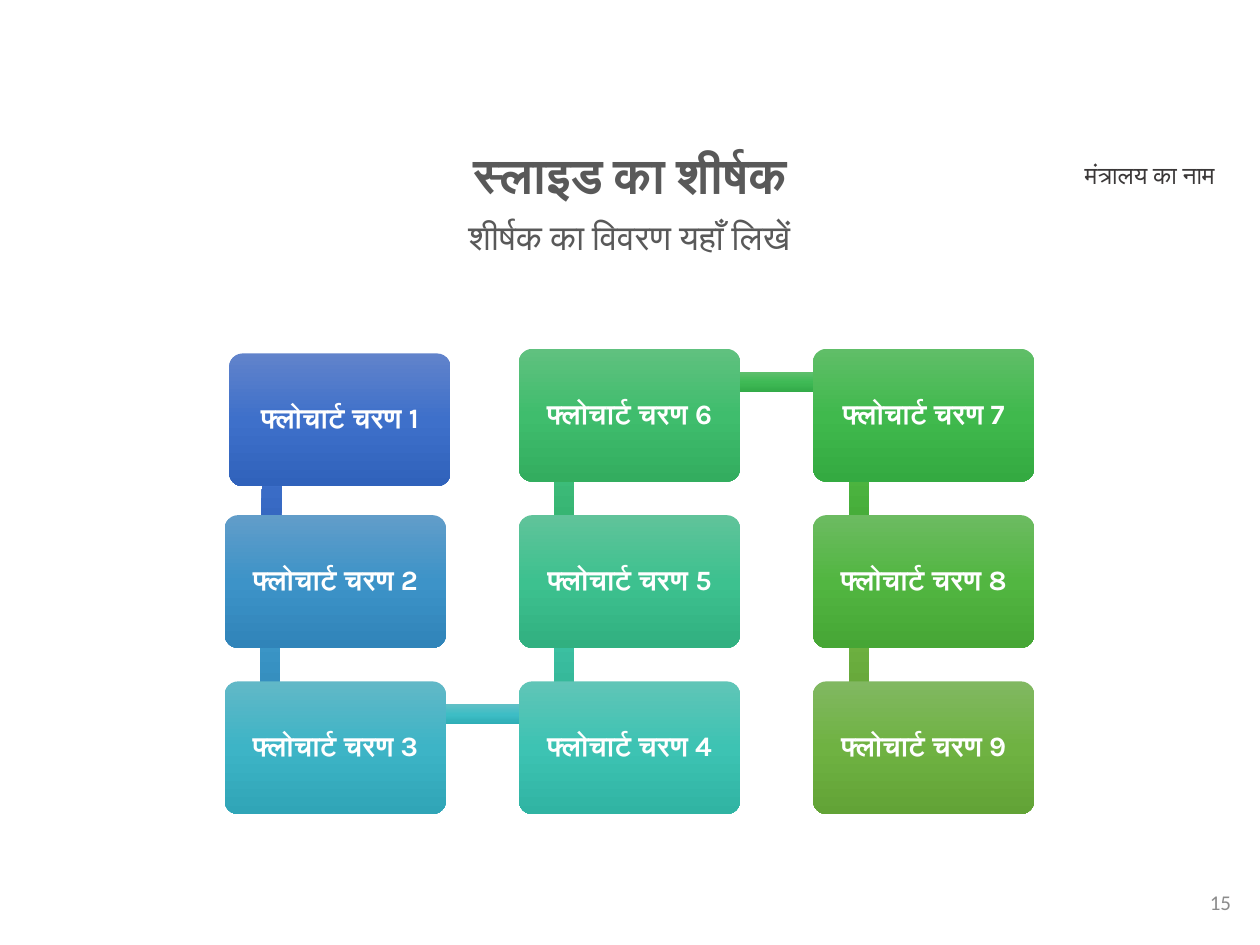
import math

import pptx
import pptx.dml.color
import pptx.enum.shapes
import pptx.enum.text
import pptx.oxml
import pptx.oxml.ns
import pptx.util

Pt = pptx.util.Pt
SHAPE = pptx.enum.shapes.MSO_SHAPE
ALIGN = pptx.enum.text.PP_ALIGN
ANCHOR = pptx.enum.text.MSO_ANCHOR

# Content
TITLE = "स्लाइड का शीर्षक"
SUBTITLE = "शीर्षक का विवरण यहाँ लिखें"
MINISTRY = "मंत्रालय का नाम"
PAGE = "15"

# Each step: text, box gradient, gradient of the link to the next step
STEPS = [
    ("फ्लोचार्ट चरण 1", ("6183CB", "3E70CA", "3062BB"), ("6183CB", "3E70CA", "3062BB")),
    ("फ्लोचार्ट चरण 2", ("619DC9", "3D93C8", "3084B9"), ("61A1C9", "3D97C8", "3089B9")),
    ("फ्लोचार्ट चरण 3", ("61B8C7", "3DB4C6", "30A5B7"), ("61C0C6", "3DBDC5", "2FAEB6")),
    ("फ्लोचार्ट चरण 4", ("60C5B7", "3DC3B3", "30B4A3"), ("60C4AA", "3DC2A3", "31B294")),
    ("फ्लोचार्ट चरण 5", ("60C39A", "3DC18F", "31B080"), ("60C28A", "3EBE7B", "32AE6D")),
    ("फ्लोचार्ट चरण 6", ("60C17F", "3FBD6D", "33AD5F"), ("60BF6E", "3FBA56", "33AB49")),
    ("फ्लोचार्ट चरण 7", ("60BE68", "40B94D", "34AA41"), ("69BB61", "4EB641", "41A735")),
    ("फ्लोचार्ट चरण 8", ("6CBB61", "52B641", "46A635"), ("81B861", "6FB242", "62A336")),
    ("फ्लोचार्ट चरण 9", ("81B861", "6FB242", "62A336"), None),
]

# Grid
ROWS = 3
LEFT, TOP = 128.4, 199.4
STEP_X, STEP_Y = 168.1, 95
BOX_W, BOX_H = 126.4, 75.8
FIRST_SHIFT = (2.6, 2.6)
JOINT_X, JOINT_Y = 26, 18.8
LINK_H = 11.4


def color(value):
    return pptx.dml.color.RGBColor.from_string(value)


def place(sp, left, top, width, height):
    sp.left, sp.top, sp.width, sp.height = Pt(left), Pt(top), Pt(width), Pt(height)


def write(sp, text, size, font, ink, bold=False, align=ALIGN.CENTER,
          anchor=ANCHOR.TOP, spacing=1.0):
    tf = sp.text_frame
    tf.word_wrap = True
    tf.auto_size = pptx.enum.text.MSO_AUTO_SIZE.NONE
    tf.vertical_anchor = anchor
    p = tf.paragraphs[0]
    p.alignment = align
    p.line_spacing = spacing
    p.space_before = Pt(0)
    r = p.add_run()
    r.text = text
    r.font.size, r.font.name, r.font.bold = Pt(size), font, bold
    r.font.color.rgb = color(ink)
    # Devanagari uses the complex-script font
    cs = pptx.oxml.parse_xml(f'<a:cs {pptx.oxml.ns.nsdecls("a")} typeface="{font}"/>')
    r.font._element.append(cs)


def add_gradient_shape(s, kind, left, top, width, height, colors):
    sp = s.shapes.add_shape(kind, Pt(left), Pt(top), Pt(width), Pt(height))
    sp.shadow.inherit = False
    sp.line.fill.background()
    stops = "".join(f'<a:gs pos="{i * 50000}"><a:srgbClr val="{c}"/></a:gs>'
                    for i, c in enumerate(colors))
    fill = pptx.oxml.parse_xml(
        f'<a:gradFill {pptx.oxml.ns.nsdecls("a")} rotWithShape="0">'
        f'<a:gsLst>{stops}</a:gsLst><a:lin ang="5400000" scaled="0"/></a:gradFill>')
    sp._element.spPr.find(pptx.oxml.ns.qn("a:prstGeom")).addnext(fill)
    return sp


def box_corner(i):
    """Boxes run down the first column, up the second and down the third."""
    col, row = divmod(i, ROWS)
    if col % 2:
        row = ROWS - 1 - row
    dx, dy = FIRST_SHIFT if i == 0 else (0, 0)
    return LEFT + col * STEP_X + dx, TOP + row * STEP_Y + dy


def add_link(s, start, end, colors):
    """A bar between the same inner point of two boxes."""
    dx, dy = end[0] - start[0], end[1] - start[1]
    length = math.hypot(dx, dy)
    left = (start[0] + end[0] - length) / 2 + JOINT_X
    top = (start[1] + end[1] - LINK_H) / 2 + JOINT_Y
    sp = add_gradient_shape(s, SHAPE.RECTANGLE, left, top, length, LINK_H, colors)
    sp.rotation = math.degrees(math.atan2(dy, dx)) % 360


def main():
    prs = pptx.Presentation()
    prs.slide_width, prs.slide_height = Pt(720), Pt(540)
    s = prs.slides.add_slide(prs.slide_layouts[0])

    # Title and subtitle
    title, subtitle = s.shapes.title, s.placeholders[1]
    place(title, 133.9, 82.8, 452.9, 33.8)
    write(title, TITLE, 28, "Calibri", "595959", bold=True, spacing=0.9)
    place(subtitle, 105.1, 122.4, 509, 45.4)
    write(subtitle, SUBTITLE, 20, "Calibri", "595959", spacing=0.9)

    # Ministry name and page number
    ministry = s.shapes.add_textbox(Pt(598.3), Pt(87.8), Pt(117.4), Pt(24.5))
    write(ministry, MINISTRY, 14, "Calibri", "3B3838")
    page = s.shapes.add_textbox(Pt(548.6), Pt(501.1), Pt(162), Pt(28.8))
    write(page, PAGE, 12, "Calibri", "8C8C8C", align=ALIGN.RIGHT, anchor=ANCHOR.MIDDLE)

    # Flowchart: each link lies behind the boxes it joins
    for i, (text, box_colors, link_colors) in enumerate(STEPS):
        corner = box_corner(i)
        if link_colors:
            add_link(s, corner, box_corner(i + 1), link_colors)
        box = add_gradient_shape(s, SHAPE.ROUNDED_RECTANGLE, *corner, BOX_W, BOX_H, box_colors)
        box.adjustments[0] = 0.1
        write(box, text, 16, "Karla", "FFFFFF", bold=True, anchor=ANCHOR.MIDDLE, spacing=0.9)

    prs.save("out.pptx")


if __name__ == "__main__":
    main()
